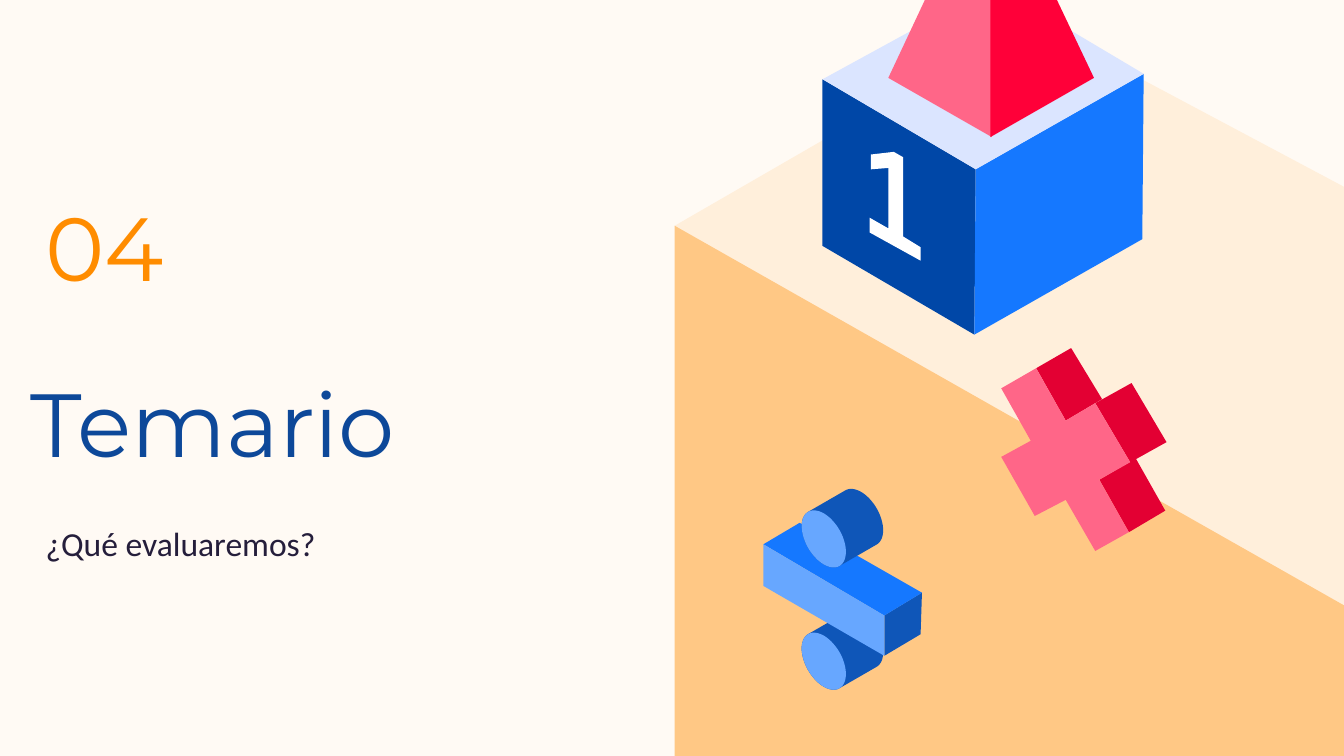
from dataclasses import dataclass
from math import cos, radians, sin

from pptx import Presentation
from pptx import util as u
from pptx.dml.color import RGBColor
from pptx.enum import text


@dataclass(frozen=True)
class Theme:
    background: str = "FFFAF4"
    table_top: str = "FFEFDB"
    table_side: str = "FFC885"
    heading: str = "0D4899"
    number: str = "FF8C00"
    body: str = "251E3B"
    navy: str = "0047A7"
    blue: str = "1578FF"
    blue_dark: str = "0F56B8"
    blue_light: str = "67A7FF"
    blue_pale: str = "DBE5FF"
    white: str = "FFFFFF"
    pink: str = "FF6688"
    red: str = "FF0039"
    crimson: str = "E30033"
    display_font: str = "Montserrat"
    body_font: str = "Calibri"
    display_size: int = 48
    body_size: int = 18


THEME = Theme()
WIDTH = 10
HEIGHT = WIDTH * 9 / 16

HEADING = dict(
    words="Temario", box=(0.13, 3.01, 6.16, 0.63), anchor=text.MSO_ANCHOR.BOTTOM, spacing=1.0,
    font=THEME.display_font, size=THEME.display_size, color=THEME.heading)
LABELS = [
    dict(words="¿Qué evaluaremos?", box=(0.24, 3.79, 3.45, 0.63), anchor=text.MSO_ANCHOR.TOP, spacing=1.0,
         font=THEME.body_font, size=THEME.body_size, color=THEME.body),
    dict(words="04", box=(0.24, 1.28, 1.92, 0.97), anchor=text.MSO_ANCHOR.MIDDLE, spacing=1.15,
         font=THEME.display_font, size=THEME.display_size, color=THEME.number),
]

TABLE = [
    (THEME.table_top, [(7.67, 0.15), (5.02, 1.68), (6.44, 5.64), (9.17, 6.64), (12.56, 6.64),
                       (12.56, 2.8), (10, 1.39)]),
    (THEME.table_side, [(5.02, 1.68), (5.02, 5.64), (6.87, 6.64), (12.56, 6.64), (12.56, 5.95),
                        (11.49, 5.35)]),
]
NUMBER_BLOCK = [
    (THEME.navy, [(6.12, 0.59), (6.12, 1.83), (7.25, 2.49), (7.26, 1.26)]),
    (THEME.blue, [(8.51, 0.55), (7.26, 1.26), (7.25, 2.49), (8.5, 1.78)]),
    (THEME.blue_pale, [(7.4, -0.11), (6.12, 0.59), (7.26, 1.26), (8.51, 0.55)]),
    (THEME.white, [(6.65, 1.13), (6.48, 1.15), (6.48, 1.26), (6.61, 1.25), (6.61, 1.7), (6.47, 1.62),
                   (6.47, 1.73), (6.85, 1.94), (6.85, 1.84), (6.72, 1.76), (6.72, 1.17)]),
    (THEME.pink, [(7.37, -1.04), (6.61, 0.58), (7.38, 1.02)]),
    (THEME.red, [(7.37, -1.04), (7.37, 1.02), (8.14, 0.58)]),
]
TIMES_SIGN = [
    (THEME.crimson, [(8.45, 3.41), (8.18, 3.57), (8.4, 3.96), (8.67, 3.8)]),
    (THEME.crimson, [(7.97, 2.59), (7.71, 2.74), (7.93, 3.13), (8.2, 2.97)]),
    (THEME.crimson, [(8.42, 2.85), (8.15, 3), (8.41, 3.44), (8.68, 3.29)]),
    (THEME.pink, [(7.71, 2.74), (7.45, 2.89), (7.67, 3.28), (7.45, 3.4), (7.7, 3.84), (7.93, 3.72),
                  (8.15, 4.1), (8.4, 3.96), (8.18, 3.57), (8.41, 3.44), (8.15, 3), (7.93, 3.13)]),
]
DIVISION_BAR = [
    (THEME.blue_dark, [(6.86, 4.41), (6.58, 4.58), (6.58, 4.88), (6.85, 4.72)]),
    (THEME.blue, [(5.95, 3.89), (5.68, 4.05), (6.58, 4.58), (6.86, 4.41)]),
    (THEME.blue_light, [(5.68, 4.05), (5.68, 4.36), (6.58, 4.88), (6.58, 4.58)]),
]
DOT_X, UPPER_DOT_Y, LOWER_DOT_Y = 6.13, 4.01, 4.92
DOT_RADIUS, DOT_DEPTH, ARC_STEP = 0.19, 0.32, 5


def isometric_arc(x, y, start, end):
    tilt = radians(30)
    angles = [radians(degree) for degree in range(start, end + 1, ARC_STEP)]
    return [(x + DOT_RADIUS * cos(a) * cos(tilt), y + DOT_RADIUS * (cos(a) * sin(tilt) + sin(a)))
            for a in angles]


def division_dot(x, y):
    back_x = x + DOT_DEPTH * cos(radians(30))
    back_y = y - DOT_DEPTH * sin(radians(30))
    barrel = isometric_arc(x, y, 45, 225) + isometric_arc(back_x, back_y, 225, 405)
    return [(THEME.blue_dark, barrel), (THEME.blue_light, isometric_arc(x, y, 0, 355))]


def draw_solid(slide, faces):
    solid = slide.shapes.add_group_shape()
    for color, corners in faces:
        points = [(u.Inches(x), u.Inches(y)) for x, y in corners]
        outline = solid.shapes.build_freeform(*points[0])
        outline.add_line_segments(points[1:], close=True)
        face = outline.convert_to_shape()
        face.fill.solid()
        face.fill.fore_color.rgb = RGBColor.from_string(color)
        face.line.fill.background()
        face.shadow.inherit = False


def write_label(holder, label):
    for side, inches in zip(("left", "top", "width", "height"), label["box"]):
        setattr(holder, side, u.Inches(inches))
    frame = holder.text_frame
    frame.text = label["words"]
    margins = {f"margin_{side}": u.Inches(0.1) for side in ("left", "top", "right", "bottom")}
    frame_format = dict(margins, word_wrap=True, auto_size=text.MSO_AUTO_SIZE.NONE,
                        vertical_anchor=label["anchor"])
    for name, value in frame_format.items():
        setattr(frame, name, value)
    line = frame.paragraphs[0]
    line.alignment = text.PP_ALIGN.LEFT
    line.line_spacing = label["spacing"]
    font = line.runs[0].font
    for name, value in dict(name=label["font"], size=u.Pt(label["size"])).items():
        setattr(font, name, value)
    font.color.rgb = RGBColor.from_string(label["color"])


def main():
    deck = Presentation()
    deck.slide_width, deck.slide_height = u.Inches(WIDTH), u.Inches(HEIGHT)
    slide = deck.slides.add_slide(deck.slide_layouts[5])
    slide.background.fill.solid()
    slide.background.fill.fore_color.rgb = RGBColor.from_string(THEME.background)

    draw_solid(slide, TABLE)
    write_label(slide.shapes.title, HEADING)
    for label in LABELS:
        write_label(slide.shapes.add_textbox(0, 0, 0, 0), label)

    division_sign = division_dot(DOT_X, LOWER_DOT_Y) + DIVISION_BAR + division_dot(DOT_X, UPPER_DOT_Y)
    for solid in (NUMBER_BLOCK, TIMES_SIGN, division_sign):
        draw_solid(slide, solid)

    deck.save("out.pptx")


if __name__ == "__main__":
    main()
